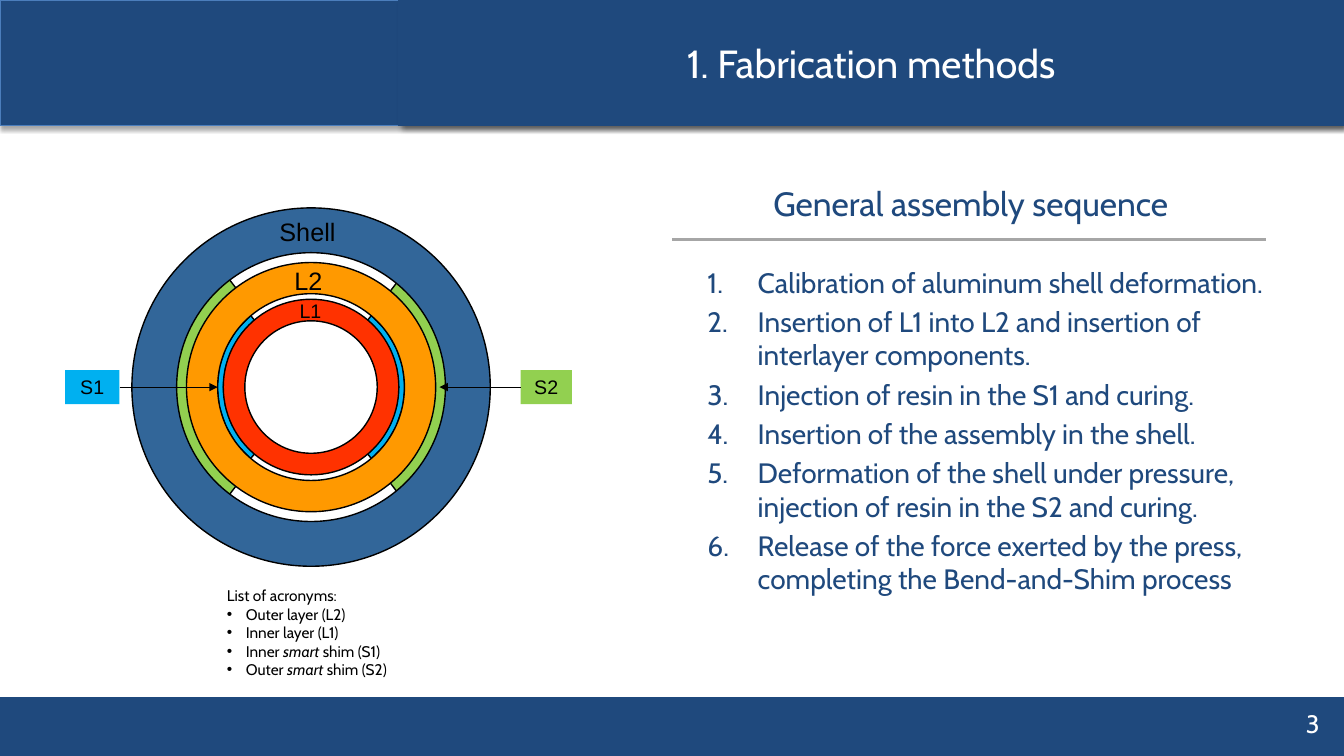
"""Build the slide on fabrication methods and the general assembly sequence."""
import math

import lxml.etree
import pptx
import pptx.dml.color
import pptx.enum.shapes
import pptx.enum.text
import pptx.oxml.ns
import pptx.util

Pt = pptx.util.Pt
RGBColor = pptx.dml.color.RGBColor
SHAPE = pptx.enum.shapes.MSO_SHAPE
STRAIGHT = pptx.enum.shapes.MSO_CONNECTOR.STRAIGHT
ALIGN = pptx.enum.text.PP_ALIGN
ANCHOR = pptx.enum.text.MSO_ANCHOR
qn = pptx.oxml.ns.qn

NAVY = RGBColor(0x1F, 0x49, 0x7D)
EDGE_BLUE = RGBColor(0x4B, 0x7E, 0xBC)
WHITE = RGBColor(0xFF, 0xFF, 0xFF)
BLACK = RGBColor(0x00, 0x00, 0x00)
GRAY = RGBColor(0xA6, 0xA6, 0xA6)
GREEN = RGBColor(0x92, 0xD0, 0x50)
CYAN = RGBColor(0x00, 0xB0, 0xF0)
STEEL = RGBColor(0x32, 0x66, 0x99)
ORANGE = RGBColor(0xFF, 0x99, 0x00)
RED = RGBColor(0xFF, 0x32, 0x00)


def paint(shape, fill, line=None, width=1):
    """Give a shape a solid fill, an optional outline and no shadow."""
    shape.shadow.inherit = False
    shape.fill.solid()
    shape.fill.fore_color.rgb = fill
    if line is None:
        shape.line.fill.background()
    else:
        shape.line.color.rgb = line
        shape.line.width = Pt(width)


def write(shape, lines, font, size, color, align=ALIGN.LEFT, anchor=ANCHOR.TOP,
          bullets=(), indent=0, gap=0):
    """Fill a shape with paragraphs; text between bars is italic."""
    frame = shape.text_frame
    for name, value in {"word_wrap": True, "vertical_anchor": anchor}.items():
        setattr(frame, name, value)
    for index, line in enumerate(lines):
        paragraph = frame.paragraphs[0] if index == 0 else frame.add_paragraph()
        if bullets and not line.endswith(":"):
            properties = paragraph._p.get_or_add_pPr()
            properties.set("marL", str(Pt(indent)))
            properties.set("indent", str(-Pt(indent)))
            for tag, attribute, value in bullets:
                lxml.etree.SubElement(properties, qn(tag)).set(attribute, value)
        paragraph.alignment = align
        if index and gap:
            paragraph.space_before = Pt(gap)
        for position, piece in enumerate(line.split("|")):
            run = paragraph.add_run()
            run.text = piece
            values = {"name": font, "size": Pt(size), "italic": position % 2 == 1}
            for name, value in values.items():
                setattr(run.font, name, value)
            run.font.color.rgb = color


presentation = pptx.Presentation()
presentation.slide_width = Pt(960)
presentation.slide_height = Pt(540)
slide = presentation.slides.add_slide(presentation.slide_layouts[6])
shapes = slide.shapes

footer = shapes.add_shape(SHAPE.RECTANGLE, Pt(0), Pt(498), Pt(960), Pt(42))
paint(footer, NAVY)
header = shapes.add_shape(SHAPE.RECTANGLE, Pt(0), Pt(0), Pt(960), Pt(90))
paint(header, NAVY, EDGE_BLUE, 0.75)
title = shapes.add_shape(SHAPE.RECTANGLE, Pt(284.4), Pt(0), Pt(675.6), Pt(90))
paint(title, NAVY)
write(title, ["1. Fabrication methods"], "Cabin", 28, WHITE, ALIGN.CENTER, ANCHOR.MIDDLE)

for band, opacity, blur, distance, angle in [(header, 35, 3.1, 1.8, 90), (title, 43, 4, 3, 45)]:
    effects = band._element.spPr.find(qn("a:effectLst"))
    shadow = lxml.etree.SubElement(effects, qn("a:outerShdw"))
    settings = {"blurRad": Pt(blur), "dist": Pt(distance), "dir": angle * 60000, "rotWithShape": 0}
    for name, value in settings.items():
        shadow.set(name, str(value))
    shade = lxml.etree.SubElement(shadow, qn("a:srgbClr"))
    shade.set("val", str(BLACK))
    lxml.etree.SubElement(shade, qn("a:alpha")).set("val", str(opacity * 1000))

page_number = shapes.add_textbox(Pt(895.7), Pt(502.6), Pt(54), Pt(28.8))
write(page_number, ["3"], "Cabin", 18, WHITE, ALIGN.RIGHT, ANCHOR.MIDDLE)

heading = shapes.add_textbox(Pt(518.4), Pt(127.2), Pt(350), Pt(44.6))
write(heading, ["General assembly sequence"], "Cabin", 24, NAVY, ALIGN.CENTER)

acronyms = shapes.add_textbox(Pt(155), Pt(415.2), Pt(174.2), Pt(74.2))
write(acronyms, [
    "List of acronyms:",
    "Outer layer (L2)",
    "Inner layer (L1)",
    "Inner |smart| shim (S1)",
    "Outer |smart| shim (S2)",
], "Cabin", 11, BLACK, indent=13.5,
    bullets=[("a:buFont", "typeface", "Arial"), ("a:buChar", "char", "•")])

steps = shapes.add_textbox(Pt(498.2), Pt(185.8), Pt(415.4), Pt(303))
write(steps, [
    "Calibration of aluminum shell deformation.",
    "Insertion of L1 into L2 and insertion of interlayer components.",
    "Injection of resin in the S1 and curing.",
    "Insertion of the assembly in the shell.",
    "Deformation of the shell under pressure, injection of resin in the S2 and curing.",
    "Release of the force exerted by the press, completing the Bend-and-Shim process",
], "Cabin", 20, NAVY, bullets=[("a:buAutoNum", "type", "arabicPeriod")], indent=36, gap=4)

center_x, center_y = 222.2, 276.5

arc_steps = 8
for color, inner, outer, half_angle, middle_x, side in [
    (GREEN, 75.6, 102.2, 52.8, center_x, -1),
    (GREEN, 75.6, 102.2, 52.8, center_x + 4.6, 1),
    (CYAN, 62.6, 67.1, 49.8, center_x, -1),
    (CYAN, 62.6, 67.1, 49.8, center_x, 1),
]:
    sweep = [math.radians(half_angle * (2 * step / arc_steps - 1)) for step in range(arc_steps + 1)]
    outline = [(outer, angle) for angle in sweep] + [(inner, angle) for angle in sweep[::-1]]
    points = [
        (Pt(middle_x + side * radius * math.cos(angle)), Pt(center_y + radius * math.sin(angle)))
        for radius, angle in outline
    ]
    builder = shapes.build_freeform(*points[0], scale=1.0)
    builder.add_line_segments(points[1:], close=True)
    paint(builder.convert_to_shape(), color, BLACK)

for color, inner, outer in [(STEEL, 96, 128), (ORANGE, 66.7, 89), (RED, 47.3, 62.7)]:
    ring = shapes.add_shape(SHAPE.DONUT, Pt(center_x - outer), Pt(center_y - outer),
                            Pt(2 * outer), Pt(2 * outer))
    ring.adjustments[0] = (outer - inner) / (2 * outer)
    paint(ring, color, BLACK)

for name, left, top, height, size in [
    ("Shell", 182.2, 151.2, 28.8, 18),
    ("L2", 182.9, 185.8, 28.8, 18),
    ("L1", 184.3, 209.8, 24.5, 14),
]:
    label = shapes.add_textbox(Pt(left), Pt(top), Pt(74.9), Pt(height))
    write(label, [name], "Arial", size, BLACK, ALIGN.CENTER)

connectors = [(shapes.add_connector(STRAIGHT, Pt(480.2), Pt(171), Pt(904.3), Pt(171)), GRAY, 2)]
for name, left, width, color, side, tip in [
    ("S1", 46.5, 38.9, CYAN, 3, 155.5),
    ("S2", 371.8, 36.7, GREEN, 1, 313.9),
]:
    tag = shapes.add_shape(SHAPE.RECTANGLE, Pt(left), Pt(center_y - 12.2), Pt(width), Pt(24.4))
    paint(tag, color)
    write(tag, [name], "Arial", 14, BLACK, ALIGN.CENTER)
    arrow = shapes.add_connector(STRAIGHT, Pt(left), Pt(center_y), Pt(tip), Pt(center_y))
    arrow.begin_connect(tag, side)
    connectors.append((arrow, BLACK, 0.5))

for connector, color, width in connectors:
    connector.line.color.rgb = color
    connector.line.width = Pt(width)
    if color == BLACK:
        tail = lxml.etree.SubElement(connector.line._get_or_add_ln(), qn("a:tailEnd"))
        tail.set("type", "triangle")
    lxml.etree.SubElement(connector._element.spPr, qn("a:effectLst"))

presentation.save("out.pptx")
